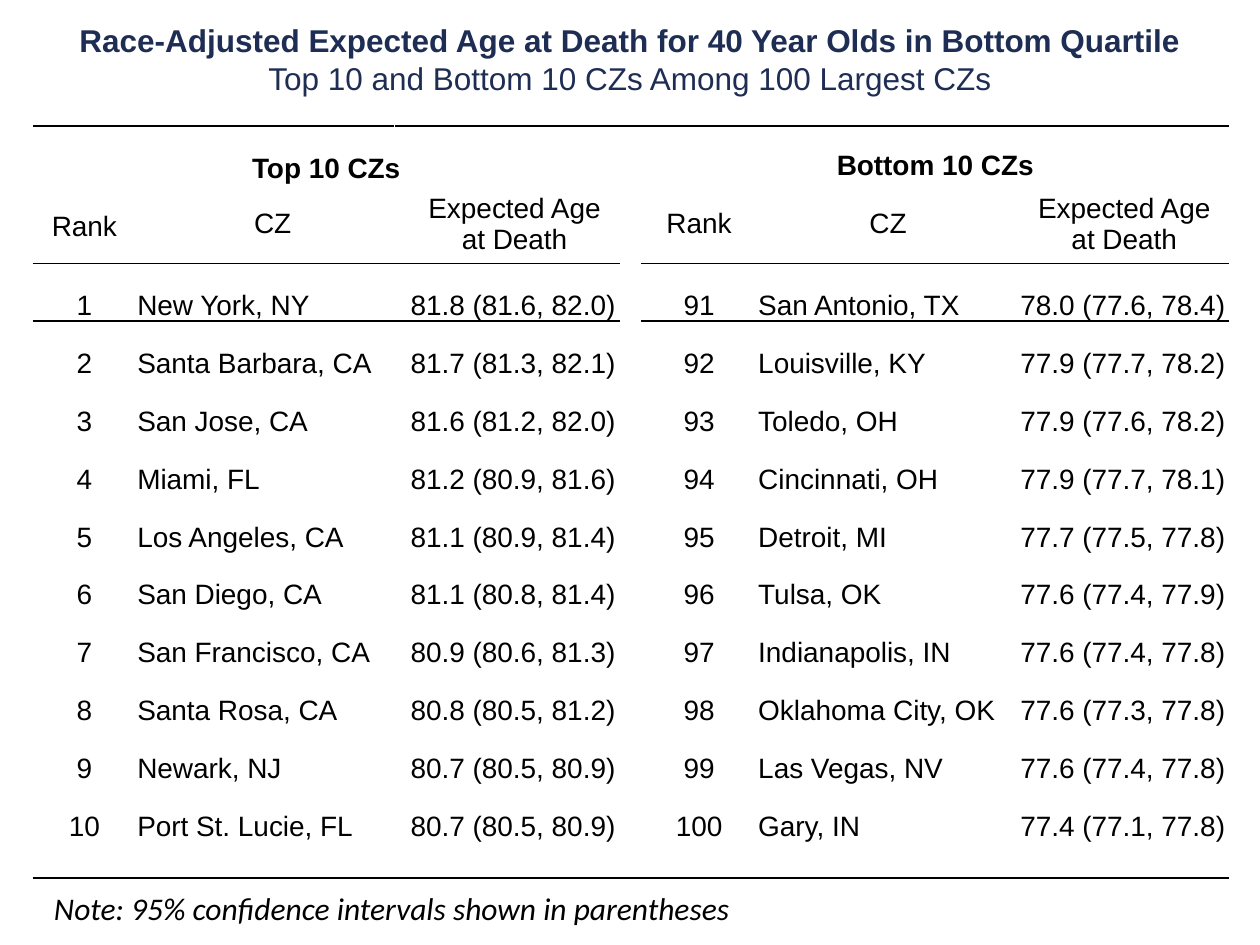
from lxml import etree
from pptx import Presentation
from pptx import util as u
from pptx.dml.color import RGBColor
from pptx.enum import text
from pptx.oxml.ns import qn

COLORS = {"black": "000000", "white": "FFFFFF", "navy": "1E2D53"}
NO_GRID_STYLE = "{2D5ABB26-0587-4C30-8999-92F81FD0307C}"
CENTER, LEFT = text.PP_ALIGN.CENTER, text.PP_ALIGN.LEFT
MIDDLE, BOTTOM = text.MSO_ANCHOR.MIDDLE, text.MSO_ANCHOR.BOTTOM

COLUMN_WIDTHS = [0.82, 2.05, 0.12, 1.67, 0.17, 0.92, 2.08, 1.67]
ROW_HEIGHTS = [0.17, 0.3, 0.62] + [0.46] * 10 + [0.28]
HEADER_ROW, LAST_ROW, GAP_COLUMN = 2, 13, 4
# For each half of the table: columns of rank, zone and age
TOP_COLUMNS, BOTTOM_COLUMNS = (0, 1, 3), (5, 6, 7)
HEADINGS = ["Rank", "CZ", "Expected Age at Death"]

TOP_ZONES = [
    ("New York, NY", "81.8 (81.6, 82.0)"),
    ("Santa Barbara, CA", "81.7 (81.3, 82.1)"),
    ("San Jose, CA", "81.6 (81.2, 82.0)"),
    ("Miami, FL", "81.2 (80.9, 81.6)"),
    ("Los Angeles, CA", "81.1 (80.9, 81.4)"),
    ("San Diego, CA", "81.1 (80.8, 81.4)"),
    ("San Francisco, CA", "80.9 (80.6, 81.3)"),
    ("Santa Rosa, CA", "80.8 (80.5, 81.2)"),
    ("Newark, NJ", "80.7 (80.5, 80.9)"),
    ("Port St. Lucie, FL", "80.7 (80.5, 80.9)"),
]
BOTTOM_ZONES = [
    ("San Antonio, TX", "78.0 (77.6, 78.4)"),
    ("Louisville, KY", "77.9 (77.7, 78.2)"),
    ("Toledo, OH", "77.9 (77.6, 78.2)"),
    ("Cincinnati, OH", "77.9 (77.7, 78.1)"),
    ("Detroit, MI", "77.7 (77.5, 77.8)"),
    ("Tulsa, OK", "77.6 (77.4, 77.9)"),
    ("Indianapolis, IN", "77.6 (77.4, 77.8)"),
    ("Oklahoma City, OK", "77.6 (77.3, 77.8)"),
    ("Las Vegas, NV", "77.6 (77.4, 77.8)"),
    ("Gary, IN", "77.4 (77.1, 77.8)"),
]


def add_run(paragraph, words, size, color="black", font="Arial", bold=False, italic=False):
    run = paragraph.add_run()
    run.text = words
    run.font.size = u.Pt(size)
    run.font.name = font
    run.font.bold = bold
    run.font.italic = italic
    run.font.color.rgb = RGBColor.from_string(COLORS[color])


def set_margins(target, side, top):
    target.margin_left = target.margin_right = u.Inches(side)
    target.margin_top = u.Inches(top)
    target.margin_bottom = 0


def write_cell(cell, words, align=CENTER, anchor=MIDDLE, bold=False, spacing=None):
    if anchor == MIDDLE:
        set_margins(cell, 0.06, 0)
    else:
        set_margins(cell, 0.01, 0.01)
    cell.vertical_anchor = anchor
    paragraph = cell.text_frame.paragraphs[0]
    paragraph.alignment = align
    if spacing:
        paragraph.line_spacing = spacing
    add_run(paragraph, words, 16, bold=bold)


def add_border(cell, side, color, width):
    properties = cell._tc.get_or_add_tcPr()
    line = etree.SubElement(properties, qn(f"a:ln{side}"), w=str(u.Pt(width)))
    fill = etree.SubElement(line, qn("a:solidFill"))
    etree.SubElement(fill, qn("a:srgbClr"), val=COLORS[color])


def add_borders(row, column, cell):
    if row == 0:
        add_border(cell, "L", "white", 1)
        add_border(cell, "R", "white", 1)
        add_border(cell, "T", "black", 1.5)
    elif row == HEADER_ROW + 1 and column != GAP_COLUMN:
        add_border(cell, "T", "black", 1)
    elif row == HEADER_ROW and column != GAP_COLUMN:
        add_border(cell, "B", "black", 1)
    elif row == LAST_ROW:
        add_border(cell, "B", "black", 1.5)


def fill_half(table, columns, title, zones, first_rank, spacing=None):
    write_cell(table.cell(1, columns[0]), title, bold=True, spacing=spacing)
    for column, heading in zip(columns, HEADINGS):
        write_cell(table.cell(HEADER_ROW, column), heading,
                   spacing=spacing if heading == "Rank" else None)
    for index, (zone, age) in enumerate(zones):
        values = (str(first_rank + index), zone, age)
        for column, value, align in zip(columns, values, (CENTER, LEFT, LEFT)):
            write_cell(table.cell(HEADER_ROW + 1 + index, column), value, align, BOTTOM)


def add_ranking_table(slide, left, top, width, height):
    frame = slide.shapes.add_table(len(ROW_HEIGHTS), len(COLUMN_WIDTHS), u.Inches(left),
                                   u.Inches(top), u.Inches(width), u.Inches(height))
    table = frame.table
    table.first_row = table.horz_banding = False
    table._tbl.tblPr.find(qn("a:tableStyleId")).text = NO_GRID_STYLE
    for column, column_width in zip(table.columns, COLUMN_WIDTHS):
        column.width = u.Inches(column_width)
    for row, row_height in zip(table.rows, ROW_HEIGHTS):
        row.height = u.Inches(row_height)

    # Merged cells: row, first column, last column
    spans = [(0, 0, 1), (0, 2, 7), (1, 0, 3), (1, 5, 7)]
    spans += [(row, 1, 2) for row in range(HEADER_ROW, LAST_ROW + 1)]
    for row, first, last in spans:
        table.cell(row, first).merge(table.cell(row, last))

    fill_half(table, TOP_COLUMNS, "Top 10 CZs", TOP_ZONES, 1, spacing=1.15)
    fill_half(table, BOTTOM_COLUMNS, "Bottom 10 CZs", BOTTOM_ZONES, 91)

    # Rules, fills, and small type in empty cells so that they stay low
    for row in range(len(ROW_HEIGHTS)):
        for column in range(len(COLUMN_WIDTHS)):
            cell = table.cell(row, column)
            add_borders(row, column, cell)
            cell.fill.solid()
            cell.fill.fore_color.rgb = RGBColor.from_string(COLORS["white"])
            if not cell.text_frame.text:
                set_margins(cell, 0, 0)
                paragraph = cell.text_frame.paragraphs[0]
                etree.SubElement(paragraph._p, qn("a:endParaRPr"), sz="600")


def add_title(slide, left, top, width, height):
    box = slide.shapes.add_textbox(*map(u.Inches, (left, top, width, height)))
    frame = box.text_frame
    frame.word_wrap = True
    set_margins(frame, 0, 0)
    title, subtitle = frame.paragraphs[0], frame.add_paragraph()
    title.alignment = subtitle.alignment = CENTER
    add_run(title, "Race-Adjusted Expected Age at Death for 40 Year Olds in Bottom Quartile",
            18, "navy", bold=True)
    add_run(subtitle, "Top 10 and Bottom 10 CZs Among 100 Largest CZs", 18, "navy")


def add_note(slide, left, top, width, height):
    box = slide.shapes.add_textbox(*map(u.Inches, (left, top, width, height)))
    box.text_frame.word_wrap = False
    add_run(box.text_frame.paragraphs[0],
            "Note: 95% confidence intervals shown in parentheses", 18,
            font="Calibri", italic=True)


def main():
    presentation = Presentation()
    presentation.slide_width = u.Inches(10)
    presentation.slide_height = u.Inches(7.5)
    slide = presentation.slides.add_slide(presentation.slide_layouts[6])
    add_ranking_table(slide, 0.26, 1, sum(COLUMN_WIDTHS), sum(ROW_HEIGHTS))
    add_title(slide, 0, 0.17, 10, 0.61)
    add_note(slide, 0.33, 7.01, 5.69, 0.4)
    presentation.save("out.pptx")


if __name__ == "__main__":
    main()
